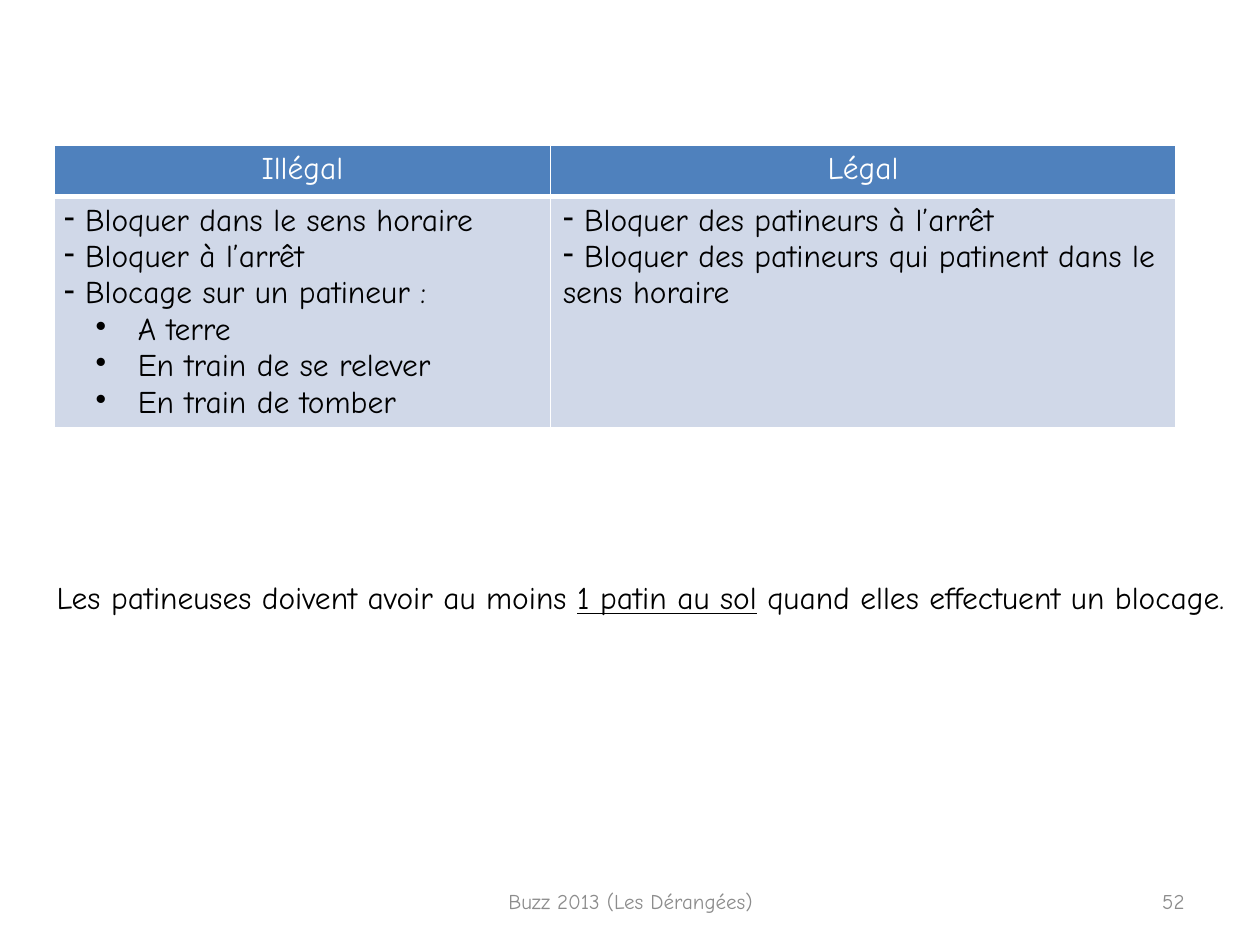
from lxml.etree import SubElement
from pptx import Presentation
from pptx.dml.color import RGBColor
from pptx.enum.text import MSO_ANCHOR, PP_ALIGN
from pptx.oxml.ns import qn
from pptx.util import Inches, Pt

# Content
HEADERS = ["Illégal", "Légal"]
# Each entry: (bullet, text)
RULES = [
    [
        ("-", " Bloquer dans le sens horaire"),
        ("-", " Bloquer à l’arrêt"),
        ("-", " Blocage sur un patineur :"),
        ("•", " A terre"),
        ("•", " En train de se relever"),
        ("•", " En train de tomber"),
    ],
    [
        ("-", " Bloquer des patineurs à l’arrêt"),
        ("-", " Bloquer des patineurs qui patinent dans le sens horaire"),
    ],
]
# Each entry: (text, underlined)
REMINDER = [
    ("Les patineuses doivent avoir au moins ", False),
    ("1 patin au sol", True),
    (" quand elles effectuent un blocage.", False),
]
FOOTER = "Buzz 2013 (Les Dérangées)"
PAGE_NUMBER = "52"

# Theme and layout
THEME = {
    "font": "Comic Neue", "body": 18, "small": 12,
    "text": "000000", "light": "FFFFFF", "muted": "8C8C8C",
    "header": "4F81BD", "band": "D0D8E8",
}
COLUMN_WIDTHS = [3.94, 4.96]
ROW_HEIGHTS = [0.41, 1.83]
LEFT_MARGINS = [0.08, 0.1]
BULLET_INDENTS = {"-": (0, 0), "•": (0.5, -0.25)}


def style(paragraph, color, size="body", alignment=PP_ALIGN.LEFT):
    paragraph.alignment = alignment
    paragraph.font.name = THEME["font"]
    paragraph.font.size = Pt(THEME[size])
    paragraph.font.bold = False
    paragraph.font.color.rgb = RGBColor.from_string(THEME[color])


def set_bullet(paragraph, character):
    margin, indent = BULLET_INDENTS[character]
    properties = paragraph._p.get_or_add_pPr()
    properties.set("marL", str(Inches(margin)))
    properties.set("indent", str(Inches(indent)))
    bullet = properties.makeelement(qn("a:buChar"), {"char": character})
    properties.insert_element_before(bullet, "a:tabLst", "a:defRPr", "a:extLst")


def set_borders(cell, bottom_width):
    properties = cell._tc.get_or_add_tcPr()
    widths = {"a:lnL": 1, "a:lnR": 1, "a:lnT": 1, "a:lnB": bottom_width}
    for position, (tag, width) in enumerate(widths.items()):
        line = properties.makeelement(qn(tag), {"w": str(Pt(width))})
        fill = SubElement(line, qn("a:solidFill"))
        SubElement(fill, qn("a:srgbClr"), val=THEME["light"])
        properties.insert(position, line)


def format_cell(cell, fill, bottom_width):
    cell.fill.solid()
    cell.fill.fore_color.rgb = RGBColor.from_string(THEME[fill])
    set_borders(cell, bottom_width)


def add_text(slide, box, runs, anchor=MSO_ANCHOR.TOP, **text_style):
    shape = slide.shapes.add_textbox(*map(Inches, box))
    frame = shape.text_frame
    frame.word_wrap = True
    frame.vertical_anchor = anchor
    paragraph = frame.paragraphs[0]
    style(paragraph, **text_style)
    for text, underlined in runs:
        run = paragraph.add_run()
        run.text = text
        if underlined:
            run.font.underline = True


def add_rules_table(slide):
    box = (0.43, 1.15, sum(COLUMN_WIDTHS), sum(ROW_HEIGHTS))
    table = slide.shapes.add_table(2, 2, *map(Inches, box)).table
    for row, height in zip(table.rows, ROW_HEIGHTS):
        row.height = Inches(height)

    for index, (header, rules) in enumerate(zip(HEADERS, RULES)):
        table.columns[index].width = Inches(COLUMN_WIDTHS[index])

        # Header cell
        cell = table.cell(0, index)
        cell.text = header
        style(cell.text_frame.paragraphs[0], "light", alignment=PP_ALIGN.CENTER)
        format_cell(cell, "header", 3)

        # List cell
        cell = table.cell(1, index)
        cell.margin_left = Inches(LEFT_MARGINS[index])
        cell.text = "\n".join(text for _, text in rules)
        for paragraph, (bullet, _) in zip(cell.text_frame.paragraphs, rules):
            style(paragraph, "text")
            set_bullet(paragraph, bullet)
            paragraph.level = 1 if bullet == "•" else 0
        format_cell(cell, "band", 1)
        # The header's thick bottom line is shared with this cell
        cell._tc.tcPr.find(qn("a:lnT")).set("w", str(Pt(3)))


def main():
    presentation = Presentation()
    presentation.slide_width = Inches(10)
    presentation.slide_height = Inches(7.5)
    slide = presentation.slides.add_slide(presentation.slide_layouts[6])

    add_rules_table(slide)
    add_text(slide, (0.35, 4.54, 9.65, 0.71), REMINDER, color="text")

    # Footer and page number
    small = {"anchor": MSO_ANCHOR.MIDDLE, "color": "muted", "size": "small"}
    add_text(slide, (3.42, 6.95, 3.17, 0.4), [(FOOTER, False)],
             alignment=PP_ALIGN.CENTER, **small)
    add_text(slide, (7.17, 6.95, 2.33, 0.4), [(PAGE_NUMBER, False)],
             alignment=PP_ALIGN.RIGHT, **small)

    presentation.save("out.pptx")


if __name__ == "__main__":
    main()
